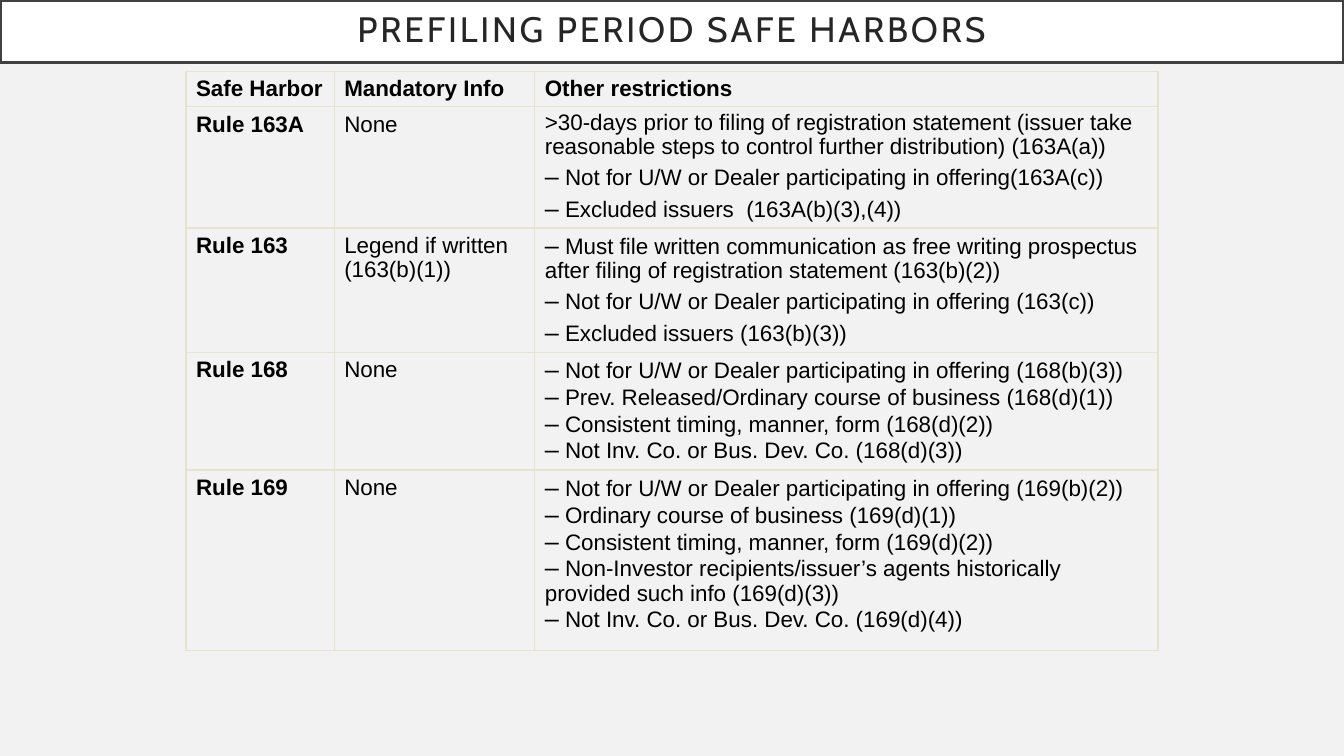
from dataclasses import dataclass

from lxml.etree import SubElement
from pptx import Presentation
from pptx.dml.color import RGBColor as RGB
from pptx.enum.text import MSO_ANCHOR as Anchor, MSO_AUTO_SIZE as AutoSize, PP_ALIGN as Align
from pptx.oxml.ns import qn
from pptx.util import Inches, Pt


@dataclass(frozen=True)
class Theme:
    back: str = "F2F2F2"
    band: str = "FFFFFF"
    frame: str = "404040"
    heading: str = "262626"
    text: str = "000000"
    grid: str = "E8E3CE"
    title_font: str = "Cabin"
    body_font: str = "Arial"
    title_size: float = 25.2
    body_size: float = 16
    dash_size: float = 18
    item_gap: float = 3.6


T = Theme()
W, H = Inches(13.33), Inches(7.5)
DASH = "–"
COLUMNS = (1.47, 1.99, 6.18)
ROWS = (0.35, 1.2, 1.23, 1.17, 1.79)
HEADER = ("Safe Harbor", "Mandatory Info", "Other restrictions")

# Rule, mandatory information, gap between restrictions, restrictions
RULES = (
    ("Rule 163A", "None", T.item_gap, (
        ">30-days prior to filing of registration statement (issuer take "
        "reasonable steps to control further distribution) (163A(a))",
        "– Not for U/W or Dealer participating in offering(163A(c))",
        "– Excluded issuers  (163A(b)(3),(4))")),
    ("Rule 163", "Legend if written (163(b)(1))", T.item_gap, (
        "– Must file written communication as free writing prospectus "
        "after filing of registration statement (163(b)(2))",
        "– Not for U/W or Dealer participating in offering (163(c))",
        "– Excluded issuers (163(b)(3))")),
    ("Rule 168", "None", 0, (
        "– Not for U/W or Dealer participating in offering (168(b)(3))",
        "– Prev. Released/Ordinary course of business (168(d)(1))",
        "– Consistent timing, manner, form (168(d)(2))",
        "– Not Inv. Co. or Bus. Dev. Co. (168(d)(3))")),
    ("Rule 169", "None", 0, (
        "– Not for U/W or Dealer participating in offering (169(b)(2))",
        "– Ordinary course of business (169(d)(1))",
        "– Consistent timing, manner, form (169(d)(2))",
        "– Non-Investor recipients/issuer’s agents historically "
        "provided such info (169(d)(3))",
        "– Not Inv. Co. or Bus. Dev. Co. (169(d)(4))")),
)


def apply(obj, formats):
    for name, value in formats.items():
        setattr(obj, name, value)


def add_run(p, text, color=T.text, **formats):
    r = p.add_run()
    r.text = text
    apply(r.font, formats)
    r.font.color.rgb = RGB.from_string(color)
    return r


def add_title(slide, box, text):
    """White framed band holding the title placeholder."""
    sp = slide.shapes.title
    apply(sp, dict(zip(("left", "top", "width", "height"), box)))
    sp.fill.solid()
    sp.fill.fore_color.rgb = RGB.from_string(T.band)
    sp.line.color.rgb = RGB.from_string(T.frame)
    sp.line.width = Pt(2.5)
    tf = sp.text_frame
    margins = ("margin_left", "margin_top", "margin_right", "margin_bottom")
    apply(tf, dict.fromkeys(margins, Inches(0.2)))
    apply(tf, {"vertical_anchor": Anchor.MIDDLE, "word_wrap": True,
               "auto_size": AutoSize.NONE})
    p = tf.paragraphs[0]
    apply(p, {"alignment": Align.CENTER, "line_spacing": 0.9})
    r = add_run(p, text, T.heading, name=T.title_font, size=Pt(T.title_size))
    r.font._element.set("spc", "200")


def style_cell(cell):
    """Thin border on every side and no fill."""
    tcPr = cell._tc.get_or_add_tcPr()
    for side in ("a:lnL", "a:lnR", "a:lnT", "a:lnB"):
        ln = SubElement(tcPr, qn(side), w=str(Pt(1)))
        fill = SubElement(ln, qn("a:solidFill"))
        SubElement(fill, qn("a:srgbClr"), val=T.grid)
    cell.fill.background()


def fill_cell(cell, items, bold=False, gap=0, spacing=1.0):
    """One paragraph per item; a leading dash is set larger."""
    style_cell(cell)
    tf = cell.text_frame
    for i, item in enumerate(items):
        p = tf.add_paragraph() if i else tf.paragraphs[0]
        apply(p, {"line_spacing": spacing, "space_before": Pt(gap if i else 0)})
        formats = {"name": T.body_font, "bold": bold}
        if item.startswith(DASH):
            add_run(p, DASH, size=Pt(T.dash_size), **formats)
        add_run(p, item.removeprefix(DASH), size=Pt(T.body_size), **formats)


def add_rules_table(slide, box):
    """Header row, then one row per rule, on the column and row grid."""
    table = slide.shapes.add_table(len(ROWS), len(COLUMNS), *box).table
    apply(table, {"first_row": False, "horz_banding": False})
    for column, width in zip(table.columns, COLUMNS):
        column.width = Inches(width)
    for row, height in zip(table.rows, ROWS):
        row.height = Inches(height)
    for c, label in enumerate(HEADER):
        fill_cell(table.cell(0, c), [label], bold=True)
    for n, (rule, info, gap, restrictions) in enumerate(RULES, 1):
        fill_cell(table.cell(n, 0), [rule], bold=True)
        fill_cell(table.cell(n, 1), [info])
        fill_cell(table.cell(n, 2), restrictions, gap=gap, spacing=0.95)


def main():
    prs = Presentation()
    apply(prs, {"slide_width": W, "slide_height": H})
    slide = prs.slides.add_slide(prs.slide_layouts.get_by_name("Title Only"))
    slide.background.fill.solid()
    slide.background.fill.fore_color.rgb = RGB.from_string(T.back)

    add_title(slide, (0, 0, W, Inches(0.62)), "PREFILING PERIOD SAFE HARBORS")
    width, height = Inches(sum(COLUMNS)), Inches(sum(ROWS))
    add_rules_table(slide, ((W - width) // 2, Inches(0.71), width, height))
    prs.save("out.pptx")


if __name__ == "__main__":
    main()
